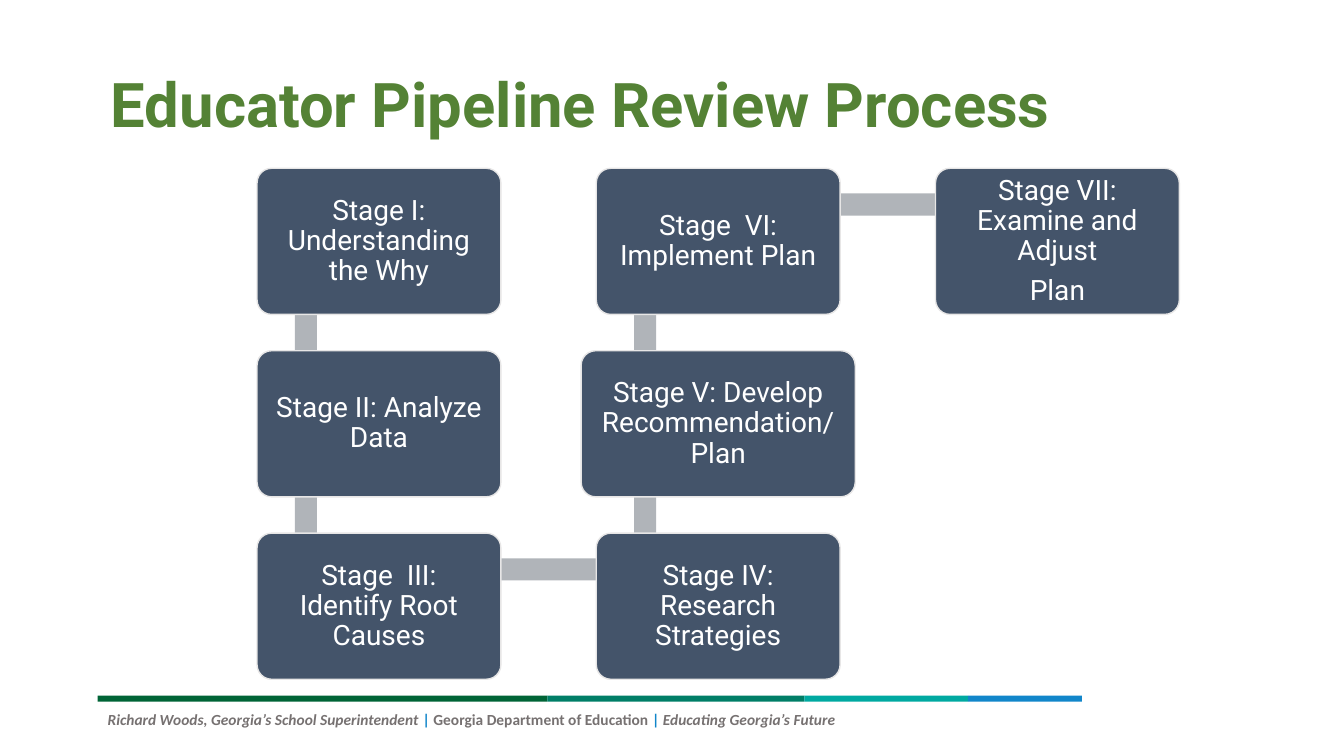
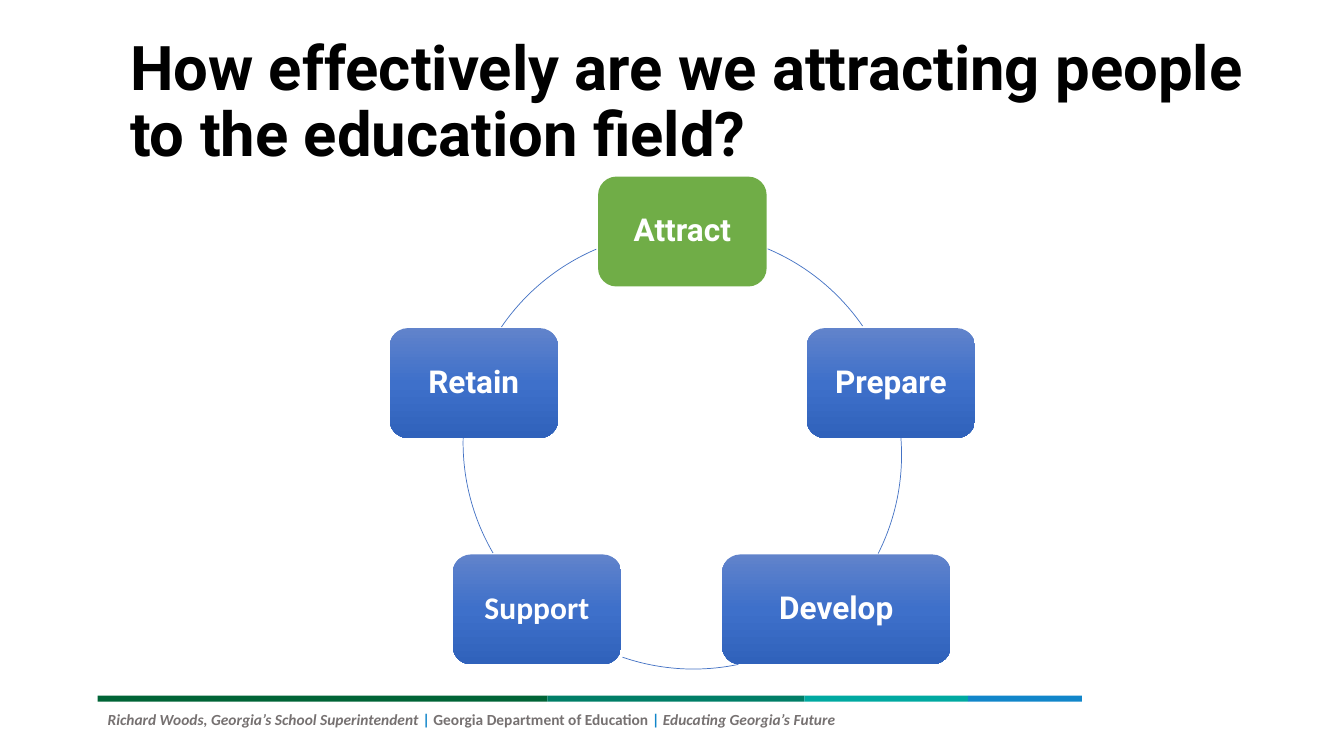
import copy
import math

import pptx
import pptx.util
import pptx.dml.color
import pptx.enum.shapes
import pptx.enum.text

Pt = pptx.util.Pt
Kind = pptx.enum.shapes.MSO_SHAPE
Align = pptx.enum.text.PP_ALIGN
Anchor = pptx.enum.text.MSO_ANCHOR

WHITE, BLACK, LEAF = "FFFFFF", "000000", "548235"
SLATE, EDGE, BAR = "44546A", "E7E6E6", "B0B4B9"
GREEN, BLUE, GREY, SKY = "70AD47", "4472C4", "767171", "1186CA"
SHADE = ("6183CB", "3E70CA", "3062BB")
BANDS = (("006436", 321.2), ("007E67", 183.6), ("00A9A1", 117), (SKY, 81.3))
CREDIT = [
    ("Richard Woods, Georgia’s School Superintendent ", {"italic": True}),
    ("|", {"ink": SKY}),
    (" Georgia Department of Education ", {}),
    ("| ", {"ink": SKY}),
    ("Educating Georgia’s Future", {"italic": True}),
]


def tint(code):
    return pptx.dml.color.RGBColor.from_string(code)


def write(shape, text, align=Align.CENTER, anchor=Anchor.MIDDLE, inset=None,
          lead=0.9, after=0, **style):
    """Fill a shape with text: a string (one paragraph a line) or a list of (text, style) runs."""
    frame = shape.text_frame
    frame.word_wrap = True
    frame.auto_size = pptx.enum.text.MSO_AUTO_SIZE.NONE
    frame.vertical_anchor = anchor
    if inset is not None:
        frame.margin_left = frame.margin_right = Pt(inset)
        frame.margin_top = frame.margin_bottom = Pt(inset)
    if isinstance(text, str):
        lines = [[(line, {})] for line in text.split("\n")]
    else:
        lines = [text]
    for i, line in enumerate(lines):
        para = frame.add_paragraph() if i else frame.paragraphs[0]
        para.alignment = align
        para.line_spacing = lead
        para.space_before = Pt(0)
        para.space_after = Pt(after)
        for words, extra in line:
            look = {"font": "Roboto", "size": 20, "ink": WHITE,
                    "bold": False, "italic": False, **style, **extra}
            run = para.add_run()
            run.text = words
            run.font.name = look["font"]
            run.font.size = Pt(look["size"])
            run.font.bold = look["bold"]
            run.font.italic = look["italic"]
            run.font.color.rgb = tint(look["ink"])


class Deck:
    def __init__(self):
        self.show = pptx.Presentation()
        self.show.slide_width = Pt(960)
        self.show.slide_height = Pt(540)
        self.layout = self.show.slide_layouts[5]
        self.slide = None

    def start(self, text, x, y, wide, ink):
        """Add a slide with its title; the first one also gives the layout its footer."""
        fresh = self.slide is None
        self.slide = self.show.slides.add_slide(self.layout)
        title = self.slide.shapes.title
        title.left, title.top = Pt(x), Pt(y)
        title.width, title.height = Pt(wide), Pt(104.4)
        write(title, text, align=Align.LEFT, size=44, bold=True, ink=ink)
        if fresh:
            self.footer()

    def footer(self):
        """Draw the bands and credit line, then move them to the layout."""
        parts, x = [], 69.8
        for ink, wide in BANDS:
            parts.append(self.block(x, 496.8, wide, 4.4, ink))
            x += wide
        note = self.slide.shapes.add_textbox(Pt(69.8), Pt(504), Pt(870), Pt(34))
        write(note, CREDIT, align=Align.LEFT, anchor=Anchor.TOP, lead=1,
              font="Calibri", size=11, bold=True, ink=GREY)
        for i, part in enumerate(parts + [note]):
            part.element.xpath(".//p:cNvPr")[0].set("id", str(100 + i))
            self.layout.shapes.element.append(part.element)

    def block(self, x, y, wide, high, fill, edge=None, kind=Kind.RECTANGLE):
        """Add a shape; fill is one colour, or three for a downward gradient."""
        shape = self.slide.shapes.add_shape(kind, Pt(x), Pt(y), Pt(wide), Pt(high))
        shape.shadow.inherit = False
        if isinstance(fill, str):
            shape.fill.solid()
            shape.fill.fore_color.rgb = tint(fill)
        else:
            self.blend(shape, fill)
        if edge:
            shape.line.color.rgb = tint(edge)
            shape.line.width = Pt(1)
        else:
            shape.line.fill.background()
        return shape

    def blend(self, shape, inks):
        shape.fill.gradient()
        shape.fill.gradient_angle = 270
        stops = shape.element.xpath(".//a:gsLst")[0]
        stops.append(copy.deepcopy(stops[-1]))
        for i, (stop, ink) in enumerate(zip(shape.fill.gradient_stops, inks)):
            stop.position = i / 2
            stop.color.rgb = tint(ink)

    def card(self, text, mid, area, fill, edge=None, round=None, **style):
        """Add a rounded box with text, centred on mid; area is its width and height."""
        (x, y), (wide, high) = mid, area
        shape = self.block(x - wide / 2, y - high / 2, wide, high, fill, edge,
                           Kind.ROUNDED_RECTANGLE)
        if round is not None:
            shape.adjustments[0] = round
        write(shape, text, after=7, **style)

    def arc(self, x, y, reach, begin, end):
        """Add a clockwise arc round (x, y), with angles in degrees from the right."""
        shape = self.slide.shapes.add_shape(
            Kind.ARC, Pt(x - reach), Pt(y - reach), Pt(2 * reach), Pt(2 * reach))
        shape.shadow.inherit = False
        shape.fill.background()
        shape.line.color.rgb = tint(BLUE)
        shape.line.width = Pt(0.5)
        for i, angle in enumerate((begin, end)):
            shape.adjustments[i] = angle * 0.6  # 60000 units a degree, in 100000ths


def stages(deck):
    deck.start("Educator Pipeline Review Process", 72, 24.5, 861, LEAF)
    wide, high = 174.2, 104.4
    left, top, across, down = 183.6, 120.2, 242.3, 130.3
    steps = [  # text, column, row, width
        ("Stage I: Understanding the Why", 0, 0, wide),
        ("Stage II: Analyze Data", 0, 1, wide),
        ("Stage  III: Identify Root Causes", 0, 2, wide),
        ("Stage IV: Research Strategies", 1, 2, wide),
        ("Stage V: Develop Recommendation/ Plan", 1, 1, 195.8),
        ("Stage  VI: Implement Plan", 1, 0, wide),
        ("Stage VII: Examine and Adjust\nPlan", 2, 0, wide),
    ]
    for (_, col, row, _), (_, nextcol, nextrow, _) in zip(steps, steps[1:]):
        x, y = left + col * across, top + min(row, nextrow) * down
        if col == nextcol:
            deck.block(x + 27, y + 26, 15.8, down, BAR)
        else:
            deck.block(x + 35, y + 18, across, 15.8, BAR)
    for text, col, row, size in steps:
        mid = (left + col * across + wide / 2, top + row * down + high / 2)
        deck.card(text, mid, (size, high), SLATE, EDGE, 0.1, inset=9)


def cycle(deck):
    deck.start("How effectively are we attracting people to the education field?",
               85.7, 21.6, 844, BLACK)
    x, y, reach = 487.4, 322, 156.6
    arcs = [  # shift right, shift down, begin, end
        (0, 0, 292.9, 325.3),
        (0, 3, 355.6, 26.7),
        (8, -0.7, 78.2, 108.9),
        (0, -6, 149.7, 181.2),
        (0, 0, 214.4, 246.9),
    ]
    for right, down, begin, end in arcs:
        deck.arc(x + right, y + down, reach, begin, end)
    steps = [  # text, shift right, shift down, width, fill, font
        ("Attract", 0, 0, 120.4, GREEN, "Roboto"),
        ("Prepare", 0, 0, 120.4, SHADE, "Roboto"),
        ("Develop", 18, -13.4, 163.4, SHADE, "Roboto"),
        ("Support", -11.8, -13.4, 120.4, SHADE, "Calibri"),
        ("Retain", 0, 0, 120.4, SHADE, "Roboto"),
    ]
    for i, (text, right, down, wide, fill, font) in enumerate(steps):
        turn = math.tau * i / len(steps)
        mid = (x + right + reach * math.sin(turn), y + down - reach * math.cos(turn))
        deck.card(text, mid, (wide, 78.5), fill, inset=11, font=font,
                  size=22.5, bold=True)


def main():
    deck = Deck()
    stages(deck)
    cycle(deck)
    deck.show.save("out.pptx")


if __name__ == "__main__":
    main()
